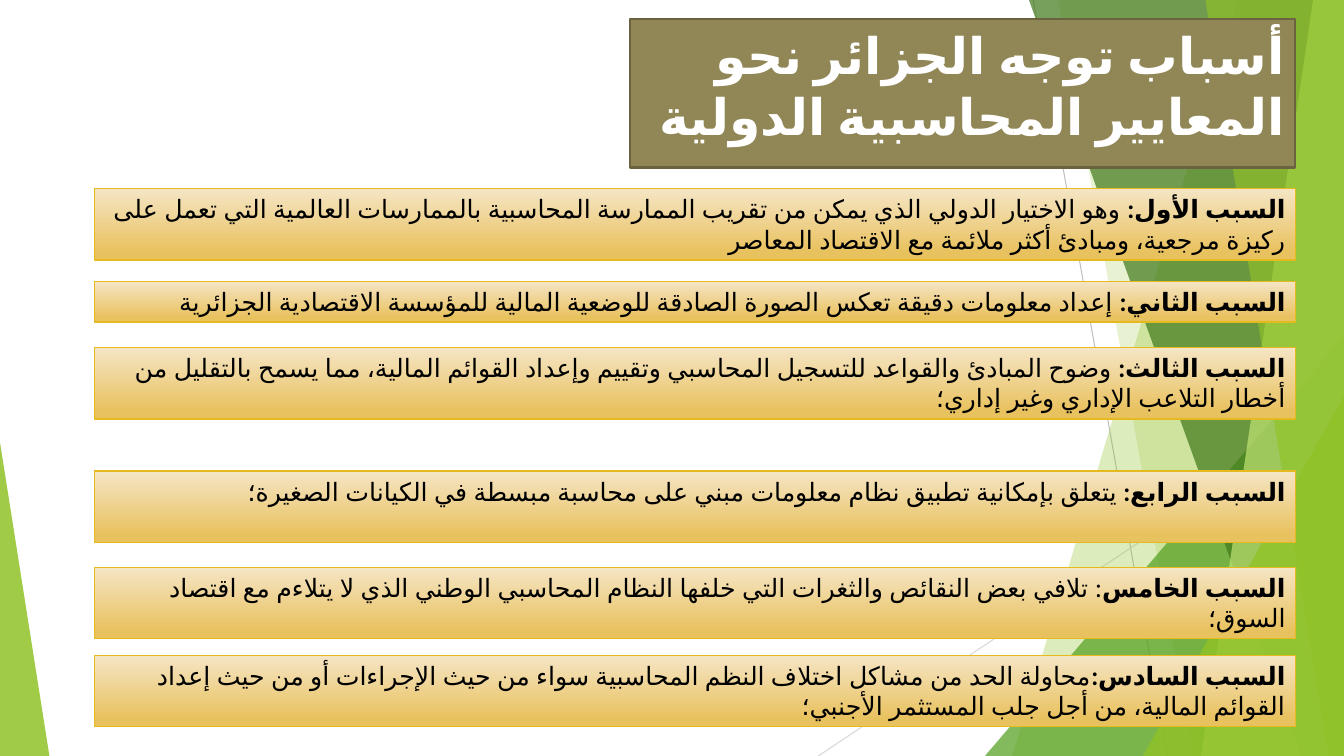
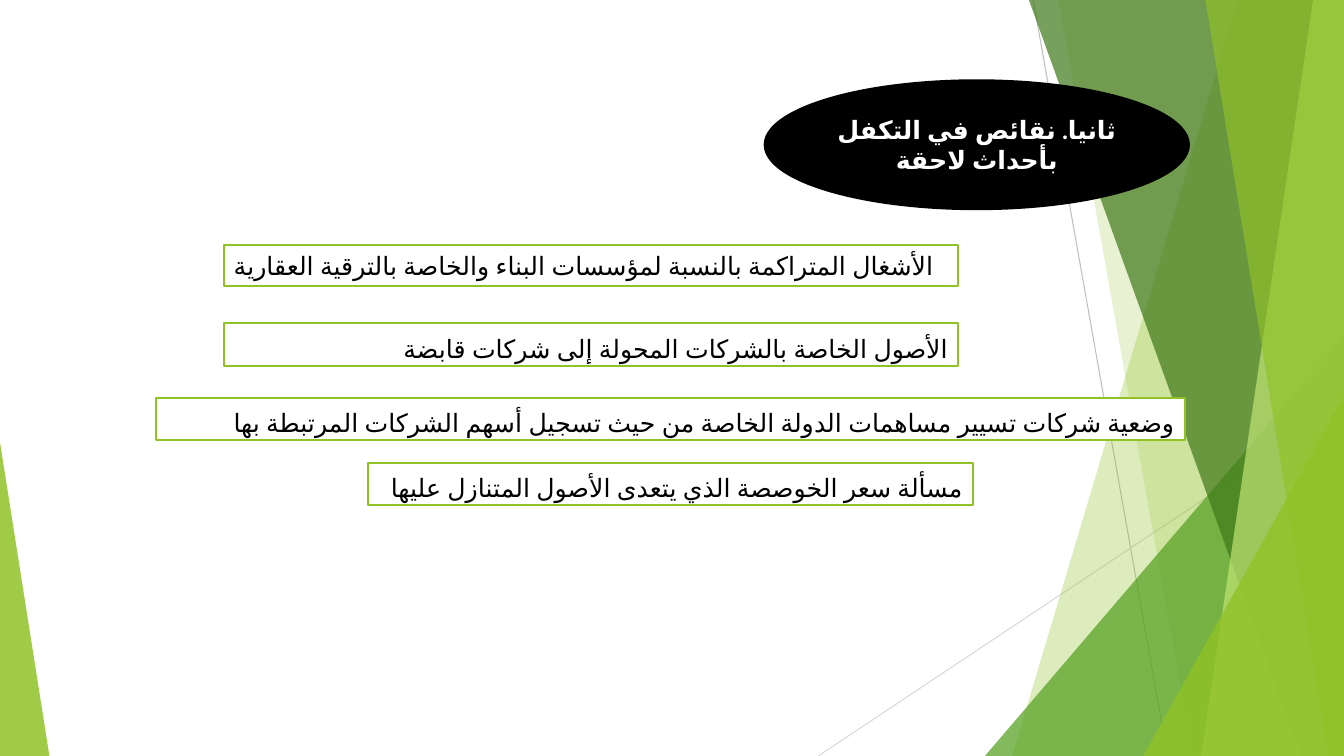
import pptx
import pptx.dml.color
import pptx.enum.lang
import pptx.enum.shapes
import pptx.enum.text
import pptx.oxml
import pptx.oxml.ns
import pptx.util

Pt = pptx.util.Pt
SHAPE = pptx.enum.shapes.MSO_SHAPE
ALIGN = pptx.enum.text.PP_ALIGN
ANCHOR = pptx.enum.text.MSO_ANCHOR
ARABIC = pptx.enum.lang.MSO_LANGUAGE_ID.ARABIC_ALGERIA
NS = pptx.oxml.ns.nsdecls("a")
FONT = "Lato"
W, H = 960, 540
COLORS = {
    "white": "FFFFFF", "black": "000000",
    "lime": "90C226", "green": "54A021", "dark": "3F7819", "pale": "C0E474",
    "olive": "918655", "olive_edge": "6B633F",
    "sand": "F5E5C5", "gold": "E9C260", "gold_edge": "E6B91E",
    "grey": "BFBFBF", "light_grey": "D9D9D9",
}
RGB = {k: pptx.dml.color.RGBColor.from_string(v) for k, v in COLORS.items()}


def paint(sp, fill, line=None, weight=1.5, alpha=100):
    """Fill and outline a shape; two fill names make a vertical gradient."""
    sp.shadow.inherit = False
    if isinstance(fill, tuple):
        sp.fill.gradient()
        sp.fill.gradient_angle = 270
        for stop, name, position in zip(sp.fill.gradient_stops, fill, (0, 0.88)):
            stop.color.rgb = RGB[name]
            stop.position = position
    else:
        sp.fill.solid()
        sp.fill.fore_color.rgb = RGB[fill]
    if alpha < 100:
        color = sp._element.spPr.find(".//" + pptx.oxml.ns.qn("a:srgbClr"))
        color.append(pptx.oxml.parse_xml(f'<a:alpha {NS} val="{alpha * 1000}"/>'))
    if line:
        sp.line.color.rgb = RGB[line]
        sp.line.width = Pt(weight)
    else:
        sp.line.fill.background()


def write(sp, text, lead="", size=18, color="black", bold=False, align=ALIGN.RIGHT,
          rtl=True, anchor=ANCHOR.TOP, spacing=None, after=None):
    """Write one paragraph, with an optional bold lead before the text."""
    tf = sp.text_frame
    tf.word_wrap = True
    tf.vertical_anchor = anchor
    p = tf.paragraphs[0]
    p.alignment = align
    if rtl:
        p._p.get_or_add_pPr().set("rtl", "1")
    if spacing:
        p.line_spacing = spacing
    if after:
        p.space_after = Pt(after)
    for part, heavy in ((lead, True), (text, bold)):
        if part:
            r = p.add_run()
            r.text = part
            r.font.language_id = ARABIC
            r.font.size = Pt(size)
            r.font.bold = heavy
            r.font.color.rgb = RGB[color]
            r.font.name = FONT
            r._r.get_or_add_rPr().append(
                pptx.oxml.parse_xml(f'<a:cs {NS} typeface="{FONT}"/>'))


prs = pptx.Presentation()
prs.slide_width, prs.slide_height = Pt(W), Pt(H)
slides = [prs.slides.add_slide(prs.slide_layouts[6]) for _ in range(2)]

# Shared decoration: thin lines, then translucent facets from back to front
lines = [(738, 0, 834, H, "grey"), (W, 290, 584.5, H, "light_grey")]
# A band has its left edge's top and bottom x; a triangle has left, top, width, apex
facets = [
    ("band", (884, 723), "lime", 30),
    ("band", (756, 852), "lime", 20),
    ("triangle", (703.5, 240, 256.5, 1), "green", 72),
    ("band", (735, 929.5), "dark", 70),
    ("band", (938, 858), "pale", 70),
    ("band", (861, 949), "lime", 65),
    ("triangle", (816.5, 283, 143.5, 1), "lime", 80),
    ("triangle", (0, 316, 35.3, 0), "lime", 85),
]
for s in slides:
    for x1, y1, x2, y2, color in lines:
        cn = s.shapes.add_connector(pptx.enum.shapes.MSO_CONNECTOR.STRAIGHT,
                                    Pt(x1), Pt(y1), Pt(x2), Pt(y2))
        cn.line.color.rgb = RGB[color]
        cn.line.width = Pt(0.75)
        cn._element.spPr.append(pptx.oxml.parse_xml(f"<a:effectLst {NS}/>"))
    for kind, place, color, alpha in facets:
        if kind == "band":
            top_x, bottom_x = place
            outline = s.shapes.build_freeform(Pt(top_x), Pt(0))
            outline.add_line_segments(
                [(Pt(W), Pt(0)), (Pt(W), Pt(H)), (Pt(bottom_x), Pt(H))], close=True)
            sp = outline.convert_to_shape()
        else:
            left, top, width, apex = place
            sp = s.shapes.add_shape(SHAPE.ISOSCELES_TRIANGLE, Pt(left), Pt(top),
                                    Pt(width), Pt(H - top))
            sp.adjustments[0] = apex
        paint(sp, color, alpha=alpha)

# Slide 1: title and six reasons
s = slides[0]
sp = s.shapes.add_shape(SHAPE.RECTANGLE, Pt(450), Pt(13.7), Pt(475), Pt(106))
paint(sp, "olive", "olive_edge")
write(sp, "أسباب توجه الجزائر نحو المعايير المحاسبية الدولية",
      size=36, color="white", bold=True)

reasons = [
    (134.8, 51, "السبب الأول: ", "وهو الاختيار الدولي الذي يمكن من تقريب الممارسة المحاسبية بالممارسات العالمية التي تعمل على ركيزة مرجعية، ومبادئ أكثر ملائمة مع الاقتصاد المعاصر"),
    (201, 29, "السبب الثاني: ", "إعداد معلومات دقيقة تعكس الصورة الصادقة للوضعية المالية للمؤسسة الاقتصادية الجزائرية"),
    (248.2, 51, "السبب الثالث: ", "وضوح المبادئ والقواعد للتسجيل المحاسبي وتقييم وإعداد القوائم المالية، مما يسمح بالتقليل من أخطار التلاعب الإداري وغير إداري؛"),
    (336.5, 51, "السبب الرابع: ", "يتعلق بإمكانية تطبيق نظام معلومات مبني على محاسبة مبسطة في الكيانات الصغيرة؛"),
    (405.3, 51, "السبب الخامس", ": تلافي بعض النقائص والثغرات التي خلفها النظام المحاسبي الوطني الذي لا يتلاءم مع اقتصاد السوق؛"),
    (468, 51, "السبب السادس:", "محاولة الحد من مشاكل اختلاف النظم المحاسبية سواء من حيث الإجراءات أو من حيث إعداد القوائم المالية، من أجل جلب المستثمر الأجنبي؛"),
]
for top, height, lead, text in reasons:
    sp = s.shapes.add_shape(SHAPE.RECTANGLE, Pt(67.5), Pt(top), Pt(858), Pt(height))
    paint(sp, ("sand", "gold"), "gold_edge", weight=1)
    write(sp, text, lead=lead)

# Slide 2: heading ellipse and four shortcomings
s = slides[1]
sp = s.shapes.add_shape(SHAPE.OVAL, Pt(546.2), Pt(57.4), Pt(303), Pt(92))
paint(sp, "black", "black")
write(sp, "ثانيا. نقائص في التكفل بأحداث لاحقة", color="white", bold=True,
      align=ALIGN.CENTER, rtl=False, anchor=ANCHOR.MIDDLE)

justified = dict(align=ALIGN.JUSTIFY, spacing=1.15, after=10)
shortcomings = [
    (160, 175, 524.5, 29, "الأشغال المتراكمة بالنسبة لمؤسسات البناء والخاصة بالترقية العقارية",
     dict(align=ALIGN.LEFT, rtl=False)),
    (160, 231, 524.5, 30.5, "الأصول الخاصة بالشركات المحولة إلى شركات قابضة", justified),
    (111.5, 284, 735, 30.5, "وضعية شركات تسيير مساهمات الدولة الخاصة من حيث تسجيل أسهم الشركات المرتبطة بها",
     justified),
    (263, 330.5, 432, 30.5, "مسألة سعر الخوصصة الذي يتعدى الأصول المتنازل عليها", justified),
]
for left, top, width, height, text, style in shortcomings:
    sp = s.shapes.add_shape(SHAPE.RECTANGLE, Pt(left), Pt(top), Pt(width), Pt(height))
    paint(sp, "white", "lime")
    write(sp, text, **style)

prs.save("out.pptx")
